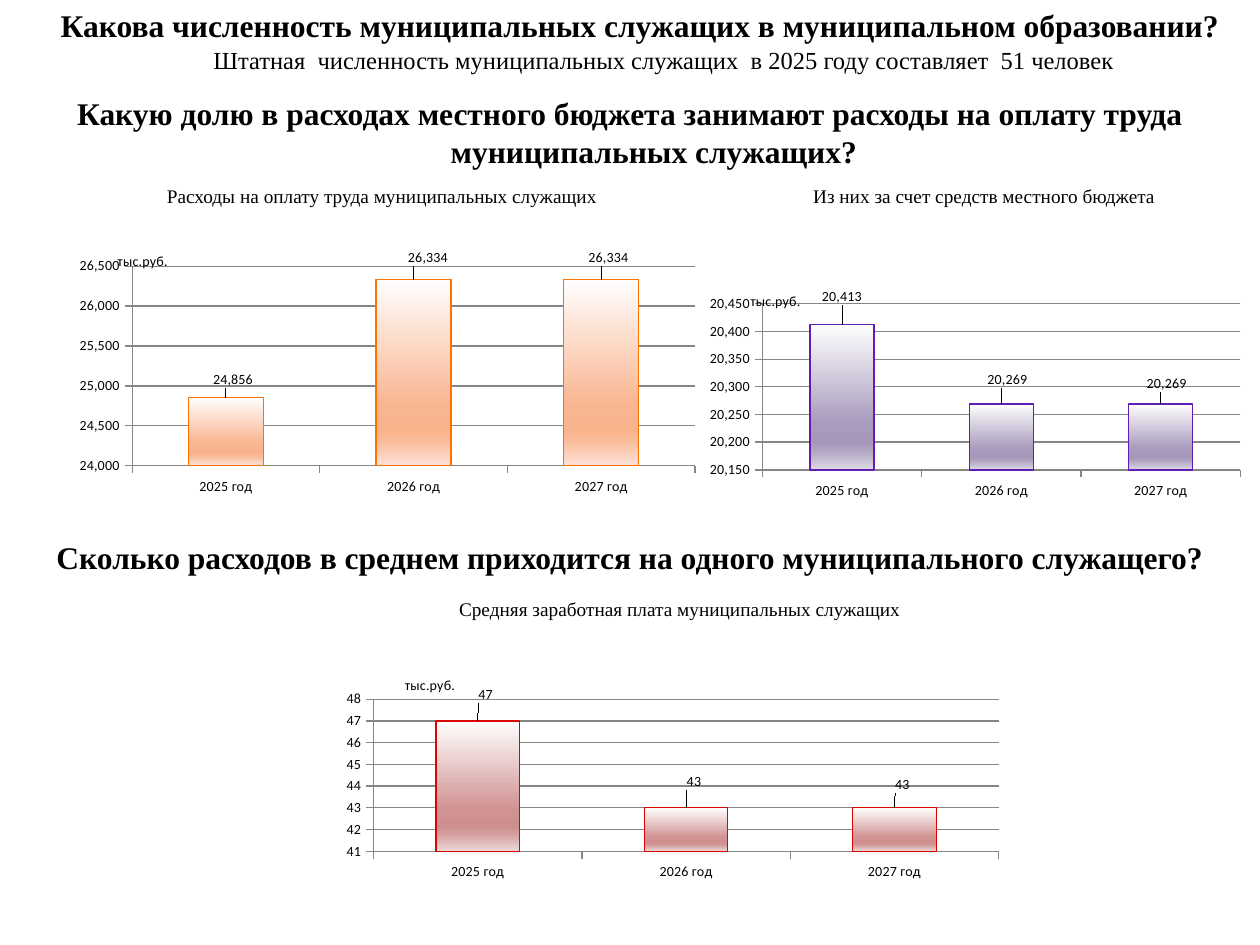
from pptx import Presentation
from pptx.chart.data import CategoryChartData as ChartData
from pptx.dml.color import RGBColor
from pptx.enum.chart import XL_CHART_TYPE as Kind, XL_LABEL_POSITION as Pos, XL_TICK_MARK as Tick
from pptx.enum.text import MSO_ANCHOR as Anchor, PP_ALIGN as Align
from pptx.oxml import parse_xml
from pptx.oxml.ns import nsdecls, qn
from pptx.util import Inches, Pt

# Content
TITLE = "Какова численность муниципальных служащих в муниципальном образовании?"
TEXTS = [  # text, box, size, bold
    ("Штатная  численность муниципальных служащих  в 2025 году составляет  51 человек",
     (0.7, 0.31, 9.14, 0.39), 14, False),
    ("Какую долю в расходах местного бюджета занимают расходы на оплату труда "
     "муниципальных служащих?", (0, 0.7, 10, 0.63), 18, True),
    ("Расходы на оплату труда муниципальных служащих ", (0.94, 1.41, 4.22, 0.39), 11, False),
    ("Из них за счет средств местного бюджета", (5.62, 1.41, 4.38, 0.39), 11, False),
    ("Сколько расходов в среднем приходится на одного муниципального служащего?",
     (0, 4.22, 10, 0.39), 18, True),
    ("Средняя заработная плата муниципальных служащих", (3.44, 4.69, 3.91, 0.39), 11, False),
]
YEARS = ["2025 год", "2026 год", "2027 год"]
UNIT = "тыс.руб."
STOPS = [0, 68, 81, 86, 100]
PLOT = (0.184, 0.312, 0.784, 0.483)
CHARTS = [  # shifts move labels, as shares of the chart size
    dict(box=(0, 1.09, 5.7, 3.28), vals=[24856, 26334, 26334], scale=(24000, 26500, 500),
         line="FE7300", fills=["FFFEFE", "F9B590", "F9B38C", "F9BA99", "FCE1D6"],
         head=(0.16, 0.27), shifts=[(0.01, -0.01), (0.02, -0.02), (0.01, -0.02)]),
    dict(box=(5.16, 1.56, 4.84, 2.73), vals=[20413, 20269, 20269], scale=(20150, 20450, 50),
         line="621EB3", fills=["FEFEFE", "A99BBD", "A697BB", "AFA3C1", "DDD9E4"],
         head=(0.16, 0.27), shifts=[(0, -0.04), (0.01, -0.03), (0.01, -0.02)]),
    dict(box=(1.8, 4.77, 6.33, 2.5), vals=[47, 43, 43], scale=(41, 48, 1),
         line="D70600", fills=["FEFEFE", "D19392", "CF8F8E", "D39C9B", "EBD7D7"],
         head=(0.22, 0.23), shifts=[(0.01, -0.04), (0.01, -0.04), (0.01, -0.03)]),
]


def rgb(code):
    return RGBColor.from_string(code)


def style(font, size, name="Calibri", bold=False, color="000000"):
    font.size, font.name, font.bold = Pt(size), name, bold
    font.color.rgb = rgb(color)


def write(shape, text, box, size=18, bold=False, hang=0.38):
    shape.left, shape.top, shape.width, shape.height = map(Inches, box)
    frame = shape.text_frame
    frame.word_wrap = True
    frame.vertical_anchor = Anchor.TOP
    para = frame.paragraphs[0]
    para.alignment = Align.CENTER
    run = para.add_run()
    run.text = text
    style(run.font, size, "Times New Roman", bold)
    if hang:
        para.space_before = Pt(size * 0.2)
        props = para._p.get_or_add_pPr()
        props.set("marL", str(Inches(hang)))
        props.set("indent", str(-Inches(hang)))


def place(node, index, nums, inner=False, edge=True):
    """Give a chart part a manual layout."""
    for old in node.findall(qn("c:layout")):
        node.remove(old)
    tags = '<c:layoutTarget val="inner"/>' if inner else ""
    if edge:
        tags += '<c:xMode val="edge"/><c:yMode val="edge"/>'
    tags += "".join(f'<c:{key} val="{num}"/>' for key, num in zip("xywh", nums))
    node.insert(index, parse_xml(
        f'<c:layout {nsdecls("c")}><c:manualLayout>{tags}</c:manualLayout></c:layout>'))


def paint(form, fills, line):
    form.fill.gradient()
    form.fill.gradient_angle = 270
    stops = form.fill._xPr.find(".//" + qn("a:gsLst"))
    for old in list(stops):
        stops.remove(old)
    for pos, code in zip(STOPS, fills):
        stops.append(parse_xml(f'<a:gs {nsdecls("a")} pos="{pos * 1000}">'
                               f'<a:srgbClr val="{code}"/></a:gs>'))
    form.line.color.rgb = rgb(line)
    form.line.width = Pt(0.75)


def draw(slide, box, vals, scale, line, fills, head, shifts):
    data = ChartData(number_format="#,##0")
    data.categories = YEARS
    data.add_series(UNIT, vals)
    chart = slide.shapes.add_chart(Kind.COLUMN_CLUSTERED, *map(Inches, box), data).chart
    style(chart.font, 18)
    chart.has_legend = False

    # Title and plot area
    chart.has_title = True
    run = chart.chart_title.text_frame.paragraphs[0].add_run()
    run.text = UNIT
    style(run.font, 8)
    place(chart.chart_title._element, 1, head)
    place(chart._chartSpace.find(".//" + qn("c:plotArea")), 0, PLOT, inner=True)

    # Axes
    axis = chart.value_axis
    axis.minimum_scale, axis.maximum_scale, axis.major_unit = scale
    axis.tick_labels.number_format = "#,##0"
    axis.tick_labels.number_format_is_linked = False
    axis.has_major_gridlines = True
    for part in (axis, chart.category_axis):
        part.major_tick_mark = Tick.OUTSIDE
        style(part.tick_labels.font, 8)
        part.format.line.color.rgb = rgb("868686")
    axis.major_gridlines.format.line.color.rgb = rgb("868686")

    # Bars and labels
    plot = chart.plots[0]
    plot.gap_width = 150
    plot.vary_by_categories = False
    bars = plot.series[0]
    paint(bars.format, fills, line)
    labels = bars.data_labels
    labels.show_value = True
    labels.number_format, labels.number_format_is_linked = "#,##0", False
    style(labels.font, 8)
    for i, shift in enumerate(shifts):
        label = bars.points[i].data_label
        label.position = Pos.OUTSIDE_END
        style(label.font, 8)
    for node, shift in zip(bars._element.findall(".//" + qn("c:dLbl")), shifts):
        place(node, 1, shift, edge=False)
        node.insert(2, parse_xml(
            f'<c:numFmt {nsdecls("c")} formatCode="#,##0" sourceLinked="0"/>'))


def main():
    deck = Presentation()
    deck.slide_width, deck.slide_height = Inches(10), Inches(7.5)
    slide = deck.slides.add_slide(deck.slide_layouts[5])
    write(slide.shapes.title, TITLE, (0.16, 0, 9.84, 0.4), bold=True, hang=0)
    for spec in CHARTS:
        draw(slide, **spec)
    for text, box, size, bold in TEXTS:
        write(slide.shapes.add_textbox(0, 0, 0, 0), text, box, size, bold)
    deck.save("out.pptx")


if __name__ == "__main__":
    main()
